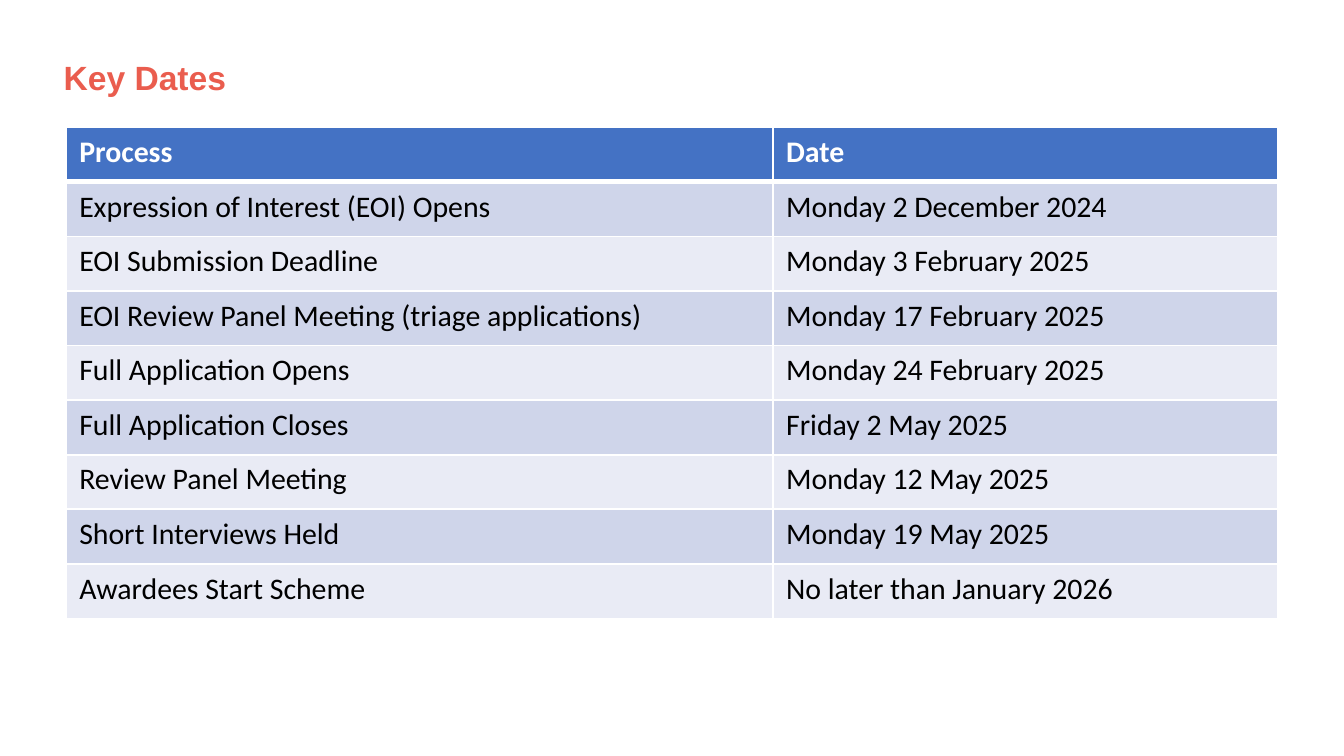
import dataclasses
import typing

import pptx
import pptx.dml.color
import pptx.enum.text
import pptx.oxml
import pptx.oxml.ns
import pptx.util

EMU_PER_PX = 9525  # 96 px to the inch


@dataclasses.dataclass(frozen=True)
class Theme:
    heading: str = "EA5D4E"
    header_fill: str = "4472C4"
    header_text: str = "FFFFFF"
    bands: tuple[str, str] = ("CFD5EA", "E9EBF5")
    body_text: str = "000000"
    rule: str = "FFFFFF"
    heading_font: str = "Arial"
    table_font: str = "Calibri"
    heading_size: int = 18
    table_size: int = 16
    thin_rule: int = 1
    header_rule: int = 3


@dataclasses.dataclass(frozen=True)
class Box:
    left: int
    top: int
    width: int
    height: int

    def emu(self) -> tuple[int, int, int, int]:
        return px(self.left), px(self.top), px(self.width), px(self.height)


class Milestone(typing.NamedTuple):
    process: str
    date: str


THEME = Theme()
SLIDE = Box(0, 0, 960, 540)
HEADING = Box(36, 23, 828, 68)
COLUMN_WIDTHS = (505, 361)
ROW_HEIGHT = 39
COLUMN_TITLES = Milestone("Process", "Date")
MILESTONES = (
    Milestone("Expression of Interest (EOI) Opens", "Monday 2 December 2024"),
    Milestone("EOI Submission Deadline", "Monday 3 February 2025"),
    Milestone("EOI Review Panel Meeting (triage applications)", "Monday 17 February 2025"),
    Milestone("Full Application Opens", "Monday 24 February 2025"),
    Milestone("Full Application Closes", "Friday 2 May 2025"),
    Milestone("Review Panel Meeting", "Monday 12 May 2025"),
    Milestone("Short Interviews Held", "Monday 19 May 2025"),
    Milestone("Awardees Start Scheme", "No later than January 2026"),
)
TIMELINE = Box(47, 91, sum(COLUMN_WIDTHS), ROW_HEIGHT * (len(MILESTONES) + 1))


def px(length: int) -> pptx.util.Emu:
    return pptx.util.Emu(length * EMU_PER_PX)


def write(paragraph, text: str, color: str, **font_format) -> None:
    run = paragraph.add_run()
    run.text = text
    run.font.color.rgb = pptx.dml.color.RGBColor.from_string(color)
    for attribute, value in font_format.items():
        setattr(run.font, attribute, value)


def draw_heading(slide, text: str) -> None:
    frame = slide.shapes.add_textbox(*HEADING.emu()).text_frame
    frame_format = {
        "word_wrap": True,
        "vertical_anchor": pptx.enum.text.MSO_ANCHOR.MIDDLE,
    }
    for attribute, value in frame_format.items():
        setattr(frame, attribute, value)
    frame.paragraphs[0].line_spacing = 0.9
    write(frame.paragraphs[0], text, THEME.heading, name=THEME.heading_font,
          size=pptx.util.Pt(THEME.heading_size), bold=True)


def add_borders(cell, top: int, bottom: int) -> None:
    """Rule all four sides; call before filling, as the schema puts lines first."""
    widths = {"L": THEME.thin_rule, "R": THEME.thin_rule, "T": top, "B": bottom}
    properties = cell._tc.get_or_add_tcPr()
    for side, points in widths.items():
        properties.append(pptx.oxml.parse_xml(
            f'<a:ln{side} {pptx.oxml.ns.nsdecls("a")} w="{pptx.util.Pt(points)}">'
            f'<a:solidFill><a:srgbClr val="{THEME.rule}"/></a:solidFill></a:ln{side}>'
        ))


def draw_row(table, index: int, milestone: Milestone) -> None:
    is_header = index == 0
    fill = THEME.header_fill if is_header else THEME.bands[(index - 1) % 2]
    color = THEME.header_text if is_header else THEME.body_text
    top = THEME.header_rule if index == 1 else THEME.thin_rule
    bottom = THEME.header_rule if is_header else THEME.thin_rule
    table.rows[index].height = px(ROW_HEIGHT)
    for cell, text in zip(table.rows[index].cells, milestone):
        add_borders(cell, top, bottom)
        cell.fill.solid()
        cell.fill.fore_color.rgb = pptx.dml.color.RGBColor.from_string(fill)
        write(cell.text_frame.paragraphs[0], text, color, name=THEME.table_font,
              size=pptx.util.Pt(THEME.table_size), bold=is_header)


def draw_timeline(slide) -> None:
    rows = (COLUMN_TITLES, *MILESTONES)
    table = slide.shapes.add_table(len(rows), len(COLUMN_WIDTHS), *TIMELINE.emu()).table
    for column, width in zip(table.columns, COLUMN_WIDTHS):
        column.width = px(width)
    for index, milestone in enumerate(rows):
        draw_row(table, index, milestone)


def main() -> None:
    deck = pptx.Presentation()
    deck.slide_width, deck.slide_height = px(SLIDE.width), px(SLIDE.height)
    key_dates = deck.slides.add_slide(deck.slide_layouts[6])
    draw_heading(key_dates, "Key Dates")
    draw_timeline(key_dates)
    deck.save("out.pptx")


if __name__ == "__main__":
    main()
